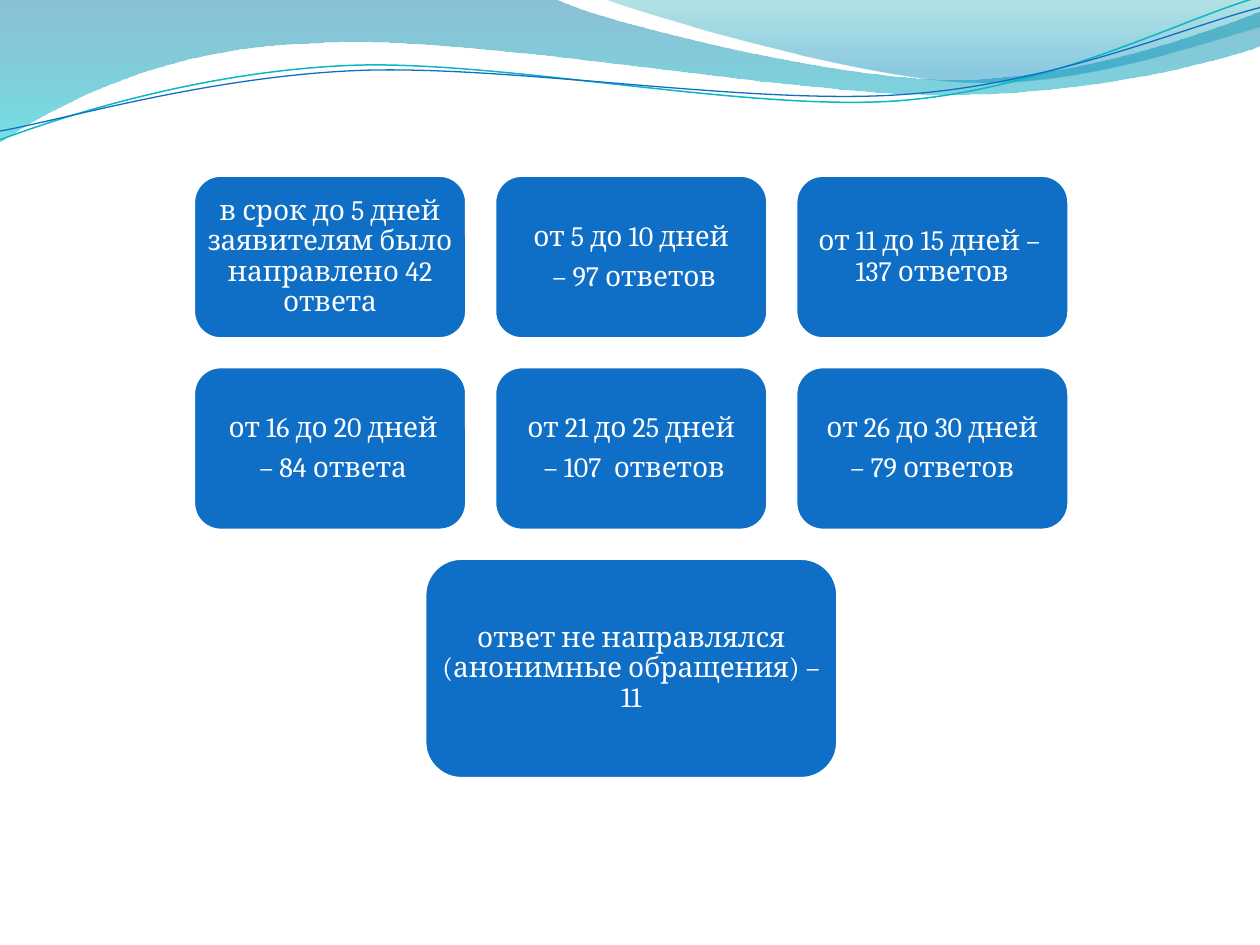
"""Build a slide of reply times as rounded cards below a wave header."""
import math

import lxml.etree
import pptx
import pptx.dml.color
import pptx.enum.shapes
import pptx.enum.text
import pptx.oxml
import pptx.oxml.ns
import pptx.util

Inches, Pt = pptx.util.Inches, pptx.util.Pt
RGBColor = pptx.dml.color.RGBColor
qn = pptx.oxml.ns.qn

WHITE = RGBColor(0xFF, 0xFF, 0xFF)
BLUE = RGBColor(0x0F, 0x6F, 0xC6)
TEAL = RGBColor(0x0A, 0xB8, 0xBF)
DEEP_BLUE = RGBColor(0x00, 0x74, 0xA1)
CYAN = RGBColor(0x00, 0xC6, 0xCF)
DARK_TEAL = RGBColor(0x00, 0xA1, 0xA9)
SKY_BLUE = RGBColor(0x00, 0x8B, 0xBF)

FONT = "Cambria"
CENTER_X, TOP, GAP = 5.01, 1.39, 0.22
CARD_SIZE = (2.17, 1.3)
WIDE_CARD_SIZE = (3.28, 1.75)
WAVE_ROTATION = -2.7

CARD_ROWS = [
    (CARD_SIZE, [
        "в срок до 5 дней заявителям было направлено 42 ответа",
        "от 5 до 10 дней\n – 97 ответов",
        "от 11 до 15 дней –  137 ответов",
    ]),
    (CARD_SIZE, [
        " от 16 до 20 дней\n – 84 ответа",
        "от 21 до 25 дней\n – 107  ответов",
        " от 26 до 30 дней \n– 79 ответов",
    ]),
    (WIDE_CARD_SIZE, ["ответ не направлялся (анонимные обращения) – 11"]),
]

WAVE_BANDS = [
    ((-0.01, -0.01, 10.02, 1.14),
     [[(0, 0)], [(4.4, -0.01)],
      [(4.76, 0.17), (6.64, 0.63), (7.58, 0.63)],
      [(8.53, 0.63), (9.58, 0.26), (10, 0.09)],
      [(10.01, 0.36)],
      [(9.83, 0.44), (8.7, 0.76), (7.46, 0.75)],
      [(6.22, 0.75), (3.82, 0.28), (2.57, 0.34)],
      [(1.29, 0.36), (0.46, 0.83), (-0.01, 1.13)],
      [(0, 0)]],
     [(0, DEEP_BLUE, 45), (1, CYAN, 55)]),
    ((4.79, -0.01, 5.21, 0.7),
     [[(4.79, -0.01)],
      [(5.09, 0.11), (6.82, 0.62), (7.69, 0.65)],
      [(8.56, 0.69), (9.61, 0.32), (10, 0.21)],
      [(10, 0)], [(4.79, -0.01)]],
     [(0, DARK_TEAL, 30), (0.8, SKY_BLUE, 45)]),
]

WAVE_LINES = [
    ((-0.02, 0.22, 10.02, 0.71),
     [[(0, 1.11)],
      [(0.48, 0.93), (1.58, 0.57), (2.77, 0.52)],
      [(3.95, 0.47), (5.93, 0.89), (7.13, 0.8)],
      [(8.33, 0.71), (9.38, 0.15), (9.98, -0.02)]], TEAL, 0.85),
    ((-0.02, 0.3, 10.03, 0.58),
     [[(0, 1.04)],
      [(0.47, 0.96), (1.64, 0.61), (2.83, 0.56)],
      [(4.03, 0.51), (5.97, 0.84), (7.17, 0.75)],
      [(8.36, 0.67), (9.41, 0.21), (10, 0.06)]], BLUE, 0.75),
]


def add_outline(slide, frame, segments, close, rotation=0):
    """Add a freeform whose three-point segments are cubic curves."""
    left, top, width, height = frame
    cosine, sine = math.cos(math.radians(rotation)), math.sin(math.radians(rotation))

    def to_local(point):
        x, y = point[0] - left - width / 2, point[1] - top - height / 2
        return (Inches(x * cosine + y * sine + width / 2),
                Inches(y * cosine - x * sine + height / 2))

    local = [[to_local(point) for point in segment] for segment in segments]
    builder = slide.shapes.build_freeform(*local[0][0], scale=1.0)
    builder.add_line_segments([segment[-1] for segment in local[1:]], close=close)
    shape = builder.convert_to_shape()
    shape.left, shape.top, shape.width, shape.height = map(Inches, frame)
    shape.rotation = rotation
    shape.shadow.inherit = False
    outline = shape._element.find(".//" + qn("a:path"))
    outline.set("w", str(shape.width))
    outline.set("h", str(shape.height))
    for command, segment in zip(list(outline), local):
        if len(segment) == 3:
            command.tag, old = qn("a:cubicBezTo"), command
            curve = lxml.etree.SubElement(outline, qn("a:cubicBezTo"))
            outline.replace(old, curve)
            command = curve
        for point in list(command):
            command.remove(point)
        for x, y in segment:
            lxml.etree.SubElement(command, qn("a:pt"), x=str(x), y=str(y))
    return shape


def add_band(slide, frame, segments, stops):
    """Add a wave band with a translucent vertical gradient."""
    shape = add_outline(slide, frame, segments, True)
    shape.line.fill.background()
    shape.fill.gradient()
    shape.fill.gradient_angle = 270
    for gradient_stop, (position, color, _) in zip(shape.fill.gradient_stops, stops):
        gradient_stop.position = position
        gradient_stop.color.rgb = color
    colors = shape._element.findall(".//" + qn("a:gs"))
    for element, (_, _, opacity) in zip(colors, stops):
        lxml.etree.SubElement(element[0], qn("a:alpha"), val=str(opacity * 1000))


def add_wave_line(slide, frame, segments, color, width):
    """Add a thin open wave line."""
    shape = add_outline(slide, frame, segments, False, WAVE_ROTATION)
    shape.fill.background()
    shape.line.color.rgb = color
    shape.line.width = Pt(width)


def add_card(slide, left, top, size, text):
    """Add a rounded card with centred text."""
    card = slide.shapes.add_shape(
        pptx.enum.shapes.MSO_SHAPE.ROUNDED_RECTANGLE,
        Inches(left), Inches(top), *map(Inches, size))
    card.shadow.inherit = False
    card.fill.solid()
    card.fill.fore_color.rgb = BLUE
    card.line.color.rgb = WHITE
    card.line.width = Pt(2)
    frame = card.text_frame
    frame.word_wrap = True
    frame.vertical_anchor = pptx.enum.text.MSO_ANCHOR.MIDDLE
    frame.margin_left = frame.margin_right = Inches(0.01)
    frame.margin_top = frame.margin_bottom = Inches(0.01)
    frame.text = text
    for paragraph in frame.paragraphs:
        paragraph.alignment = pptx.enum.text.PP_ALIGN.CENTER
        paragraph.line_spacing = 0.9
        paragraph.space_after = Pt(5.6)
        for run in paragraph.runs:
            run.font.name = FONT
            run.font.size = Pt(16)
            run.font.color.rgb = WHITE


def main():
    """Build and save the presentation."""
    presentation = pptx.Presentation()
    presentation.slide_width, presentation.slide_height = Inches(10), Inches(7.5)
    slide = presentation.slides.add_slide(presentation.slide_layouts[6])
    for band in WAVE_BANDS:
        add_band(slide, *band)
    for wave_line in WAVE_LINES:
        add_wave_line(slide, *wave_line)
    top = TOP
    for size, texts in CARD_ROWS:
        width, height = size
        pitch = width + GAP
        first_left = CENTER_X - (len(texts) * pitch - GAP) / 2
        for column, text in enumerate(texts):
            add_card(slide, first_left + column * pitch, top, size, text)
        top += height + GAP
    presentation.save("out.pptx")


if __name__ == "__main__":
    main()
